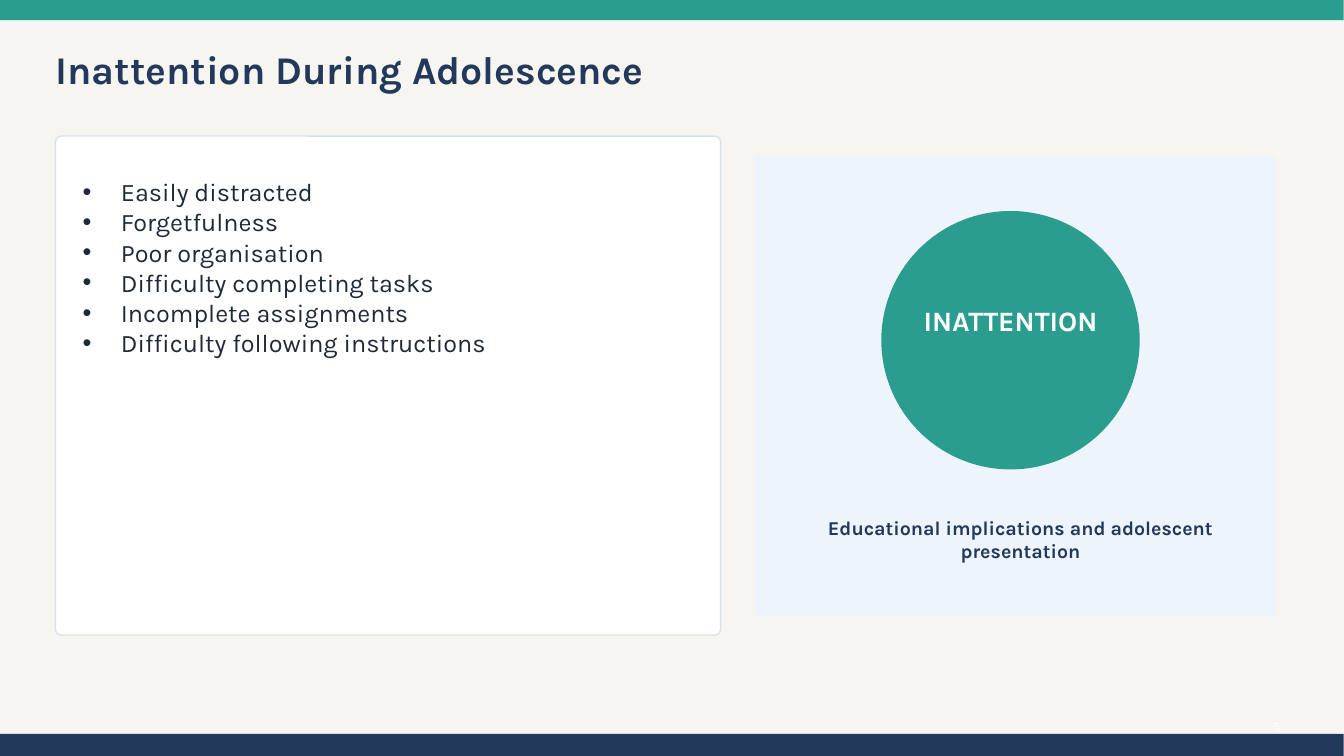
from dataclasses import dataclass

from lxml import etree
from pptx import Presentation
from pptx.dml.color import RGBColor
from pptx.enum.shapes import MSO_SHAPE
from pptx.enum.text import MSO_ANCHOR, MSO_AUTO_SIZE, PP_ALIGN
from pptx.oxml.ns import qn
from pptx.util import Emu, Pt

RECT, ROUND, OVAL = MSO_SHAPE.RECTANGLE, MSO_SHAPE.ROUNDED_RECTANGLE, MSO_SHAPE.OVAL
LEFT, MID, RIGHT = PP_ALIGN.LEFT, PP_ALIGN.CENTER, PP_ALIGN.RIGHT
TOP, CENTER = MSO_ANCHOR.TOP, MSO_ANCHOR.MIDDLE
NO_FIT = MSO_AUTO_SIZE.NONE
SCALE = 9144  # EMU in one px, 100 px to the inch
WIDE, HIGH = 1333, 750


@dataclass(frozen=True)
class Theme:
    font: str = "Karla"
    paper: str = "F7F5F0"
    teal: str = "2A9D8F"
    navy: str = "23395B"
    white: str = "FFFFFF"
    edge: str = "D9E2EC"
    pale: str = "EEF4FB"
    ink: str = "1F2937"
    title: int = 28
    hub: int = 20
    body: int = 18
    note: int = 14
    page: int = 9


@dataclass(frozen=True)
class Box:
    x: int
    y: int
    w: int
    h: int

    def emu(self) -> tuple:
        return tuple(Emu(n * SCALE) for n in (self.x, self.y, self.w, self.h))


@dataclass(frozen=True)
class Panel:
    kind: int
    box: Box
    fill: str
    line: str = ""
    round: float = 0


@dataclass(frozen=True)
class Label:
    box: Box
    text: str
    size: int
    color: str
    bold: bool = True
    align: int = MID
    anchor: int = CENTER


THEME = Theme()

PANELS = [
    Panel(RECT, Box(0, 0, WIDE, 20), THEME.teal),
    Panel(RECT, Box(0, 728, WIDE, 22), THEME.navy),
    Panel(ROUND, Box(55, 135, 660, 495), THEME.white, THEME.edge, 0.012),
    Panel(RECT, Box(750, 155, 515, 455), THEME.pale, THEME.pale),
    Panel(OVAL, Box(875, 210, 255, 255), THEME.teal, THEME.teal),
]

TITLE = Label(Box(55, 38, 880, 60), "Inattention During Adolescence",
              THEME.title, THEME.navy, align=LEFT)

SIGNS = Label(
    Box(82, 175, 595, 425),
    "\n".join([
        "Easily distracted",
        "Forgetfulness",
        "Poor organisation",
        "Difficulty completing tasks",
        "Incomplete assignments",
        "Difficulty following instructions",
    ]),
    THEME.body, THEME.ink, bold=False, align=LEFT, anchor=TOP)

LABELS = [
    Label(Box(1235, 712, 35, 18), "5", THEME.page, THEME.white, bold=False, align=RIGHT),
    Label(Box(895, 295, 215, 45), "INATTENTION", THEME.hub, THEME.white),
    Label(Box(800, 500, 425, 70), "Educational implications and adolescent presentation",
          THEME.note, THEME.navy),
]


def rgb(code: str) -> RGBColor:
    return RGBColor.from_string(code)


def draw_panel(slide, item: Panel) -> None:
    shape = slide.shapes.add_shape(item.kind, *item.box.emu())
    shape.shadow.inherit = False
    shape.fill.solid()
    shape.fill.fore_color.rgb = rgb(item.fill)
    if item.line:
        shape.line.color.rgb = rgb(item.line)
        shape.line.width = Pt(1)
    else:
        shape.line.fill.background()
    if item.round:
        shape.adjustments[0] = item.round


def add_bullet(para) -> None:
    props = para._p.get_or_add_pPr()
    indent = 38 * SCALE
    props.set("marL", str(indent))
    props.set("indent", str(-indent))
    etree.SubElement(props, qn("a:buChar")).set("char", "•")


def write(shape, item: Label, bullets: bool = False) -> None:
    shape.left, shape.top, shape.width, shape.height = item.box.emu()
    frame = shape.text_frame
    frame.text = item.text
    frame.word_wrap = True
    frame.auto_size = NO_FIT
    frame.vertical_anchor = item.anchor
    frame.margin_left = frame.margin_right = 0
    frame.margin_top = frame.margin_bottom = 0
    for para in frame.paragraphs:
        para.alignment = item.align
        para.space_before = Pt(0)
        if bullets:
            add_bullet(para)
        for run in para.runs:
            run.font.name = THEME.font
            run.font.size = Pt(item.size)
            run.font.bold = item.bold
            run.font.color.rgb = rgb(item.color)


def main() -> None:
    deck = Presentation()
    deck.slide_width, deck.slide_height = Emu(12192000), Emu(HIGH * SCALE)
    slide = deck.slides.add_slide(deck.slide_layouts[1])
    slide.background.fill.solid()
    slide.background.fill.fore_color.rgb = rgb(THEME.paper)

    # Bars, card and side panel
    for item in PANELS:
        draw_panel(slide, item)

    # Title and list, raised above the panels
    title, body = slide.shapes.title, slide.placeholders[1]
    for holder in (title, body):
        slide.shapes._spTree.append(holder._element)
    write(title, TITLE)
    write(body, SIGNS, bullets=True)

    # Page number, hub word and caption
    for item in LABELS:
        write(slide.shapes.add_textbox(*item.box.emu()), item)

    deck.save("out.pptx")


if __name__ == "__main__":
    main()
